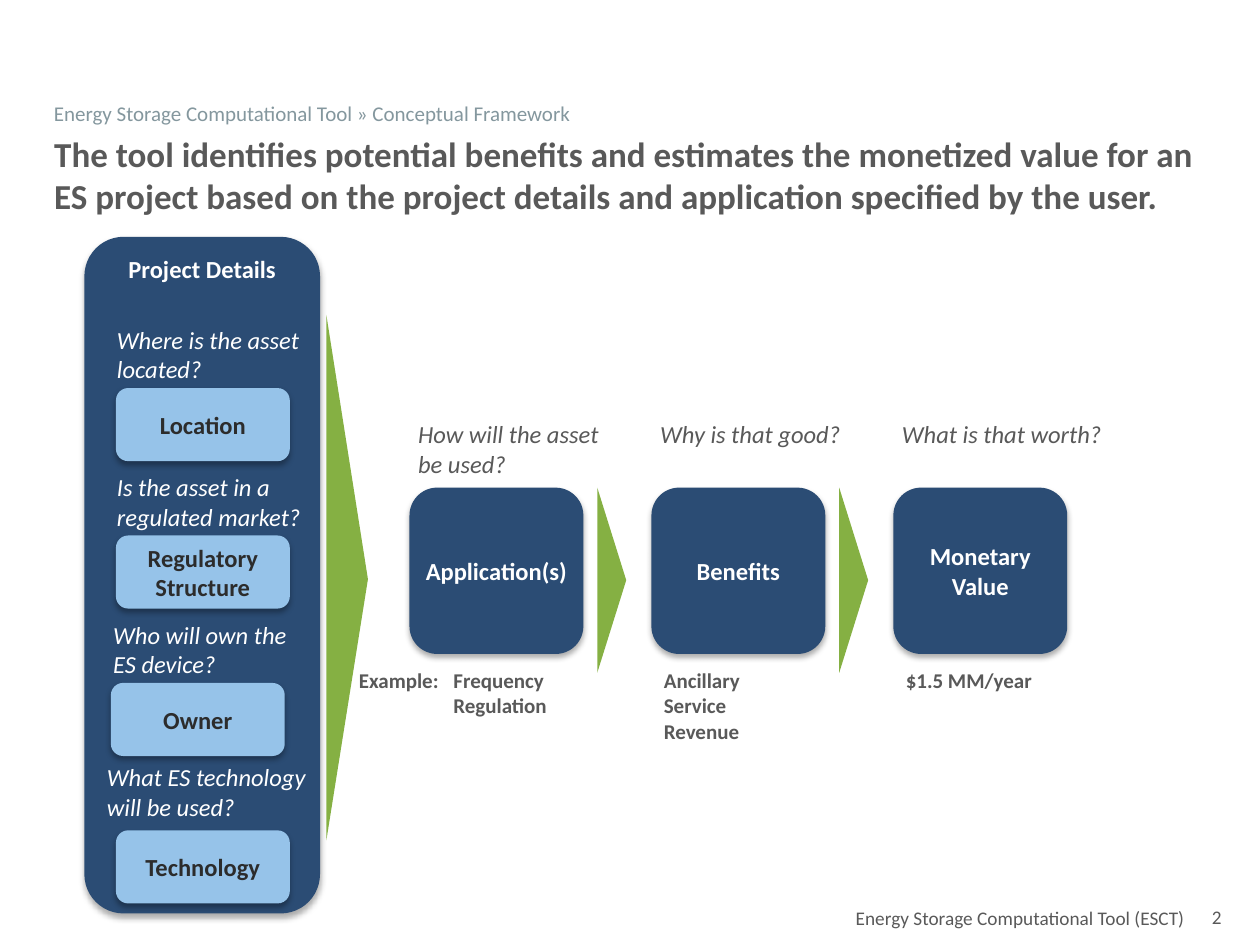
from lxml.etree import SubElement
from pptx import Presentation
from pptx.dml.color import RGBColor
from pptx.enum.shapes import MSO_SHAPE as Shape
from pptx.enum.text import MSO_ANCHOR as Anchor, MSO_AUTO_SIZE as AutoSize, PP_ALIGN as Align
from pptx.oxml.ns import qn
from pptx.util import Inches, Pt

NAVY = RGBColor(0x2B, 0x4C, 0x74)
SKY = RGBColor(0x96, 0xC3, 0xE9)
GREEN = RGBColor(0x85, 0xB0, 0x43)
GRAY = RGBColor(0x59, 0x59, 0x59)
SLATE = RGBColor(0x84, 0x97, 0x9E)
INK = RGBColor(0x2C, 0x2C, 0x2C)
WHITE = RGBColor(0xFF, 0xFF, 0xFF)
FONT = "Calibri"

STEP_LEFT, STEP_PITCH, STEP_TOP = 3.25, 1.92, 3.87
STEP_WIDTH, STEP_HEIGHT = 1.38, 1.32
DETAIL_TOP, DETAIL_PITCH, DETAIL_HEIGHT = 3.08, 1.17, 0.58
EXAMPLE_TOP = 5.2

# question, question left, question width, answer, answer left, answer wraps
DETAILS = [
    ("Where is the asset located?", 0.83, 1.7, "Location", 0.92, False),
    ("Is the asset in a regulated market?", 0.83, 1.7, "Regulatory Structure", 0.92, True),
    ("Who will own the ES device?", 0.8, 1.7, "Owner", 0.88, False),
    ("What ES technology will be used?", 0.75, 1.83, "Technology", 0.92, False),
]

# question, question width, step, step wraps, example, example left
STEPS = [
    ("How will the asset be used?", 1.7, "Application(s)", False, "Frequency Regulation", 3.5),
    ("Why is that good?", 1.7, "Benefits", False, "Ancillary Service Revenue", 5.17),
    ("What is that worth?", 1.87, "Monetary Value", True, "$1.5 MM/year", 7.09),
]


def write(shape, text, size=14, color=GRAY, bold=False, italic=False,
          align=Align.LEFT, anchor=Anchor.TOP, wrap=True, inset=0.05):
    frame = shape.text_frame
    frame.auto_size = AutoSize.NONE
    frame.word_wrap = wrap
    frame.vertical_anchor = anchor
    frame.margin_left = frame.margin_right = Inches(0.1)
    frame.margin_top = frame.margin_bottom = Inches(inset)
    paragraph = frame.paragraphs[0]
    paragraph.alignment = align
    run = paragraph.add_run()
    run.text = text
    font = run.font
    font.name, font.size, font.bold, font.italic = FONT, Pt(size), bold, italic
    font.color.rgb = color


def add_text(slide, text, left, top, width, height, **style):
    box = slide.shapes.add_textbox(*map(Inches, (left, top, width, height)))
    write(box, text, **style)


def add_title(slide, text):
    title = slide.shapes.title
    title.left, title.top, title.width, title.height = map(Inches, (0.33, 1, 9.42, 0.74))
    write(title, text, size=20, bold=True)


def add_filled(slide, kind, left, top, width, height, fill):
    shape = slide.shapes.add_shape(kind, *map(Inches, (left, top, width, height)))
    shape.shadow.inherit = False
    shape.fill.solid()
    shape.fill.fore_color.rgb = fill
    shape.line.fill.background()
    return shape


def add_soft_shadow(shape):
    effects = shape._element.spPr.find(qn("a:effectLst"))
    shadow = SubElement(effects, qn("a:outerShdw"), blurRad=str(Pt(3.5)),
                        dist=str(Pt(2.2)), dir="5400000", rotWithShape="0")
    color = SubElement(shadow, qn("a:srgbClr"), val="000000")
    SubElement(color, qn("a:alpha"), val="32000")


def add_card(slide, text, left, top, width, height, fill=NAVY, color=WHITE,
             anchor=Anchor.MIDDLE, wrap=False):
    card = add_filled(slide, Shape.ROUNDED_RECTANGLE, left, top, width, height, fill)
    add_soft_shadow(card)
    write(card, text, color=color, bold=True, align=Align.CENTER, anchor=anchor, wrap=wrap)


def add_pointer(slide, left, top, width, height, tip=0.5):
    """Triangle pointing right; the frame is given as it appears after rotation."""
    pointer = add_filled(slide, Shape.ISOSCELES_TRIANGLE, left + (width - height) / 2,
                         top + (height - width) / 2, height, width, GREEN)
    pointer.rotation = 90
    pointer.adjustments[0] = tip


def add_project_details(slide):
    add_card(slide, "Project Details", 0.67, 1.88, 1.87, 5.37, anchor=Anchor.TOP)
    for row, (question, left, width, answer, answer_left, wrap) in enumerate(DETAILS):
        top = DETAIL_TOP + row * DETAIL_PITCH
        add_card(slide, answer, answer_left, top, STEP_WIDTH, DETAIL_HEIGHT,
                 fill=SKY, color=INK, wrap=wrap)
        question_top = min(top - 0.55, 6)
        add_text(slide, question, left, question_top, width, 0.55, color=WHITE, italic=True)
    add_pointer(slide, 2.59, 2.5, 0.33, 4.17, tip=0.503)


def add_steps(slide):
    example_style = dict(size=12, bold=True, inset=0.1)
    add_text(slide, "Example:", 2.75, EXAMPLE_TOP, 4.92, 0.45, **example_style)
    for column, (question, width, step, wrap, example, example_left) in enumerate(STEPS):
        left = STEP_LEFT + column * STEP_PITCH
        add_text(slide, question, left - 0.03, 3.28, width, 0.5, italic=True)
        add_card(slide, step, left, STEP_TOP, STEP_WIDTH, STEP_HEIGHT, wrap=wrap)
        add_text(slide, example, example_left, EXAMPLE_TOP, 1.25, 0.45, **example_style)
        if column < len(STEPS) - 1:
            add_pointer(slide, left + 1.49, STEP_TOP, 0.23, 1.47)


def add_footer(slide):
    add_text(slide, "Energy Storage Computational Tool (ESCT)", 3.08, 7.14, 6.42, 0.25,
             size=11, align=Align.RIGHT)
    add_text(slide, "2", 9.52, 7.15, 0.58, 0.26, size=11, anchor=Anchor.MIDDLE, inset=0.1)


def main():
    presentation = Presentation()
    presentation.slide_width, presentation.slide_height = Inches(10), Inches(7.5)
    slide = presentation.slides.add_slide(presentation.slide_layouts[5])
    add_title(slide, "The tool identifies potential benefits and estimates the monetized "
                     "value for an ES project based on the project details and "
                     "application specified by the user.")
    add_text(slide, "Energy Storage Computational Tool » Conceptual Framework",
             0.33, 0.75, 9.3, 0.25, size=12, color=SLATE)
    add_project_details(slide)
    add_steps(slide)
    add_footer(slide)
    presentation.save("out.pptx")


if __name__ == "__main__":
    main()
